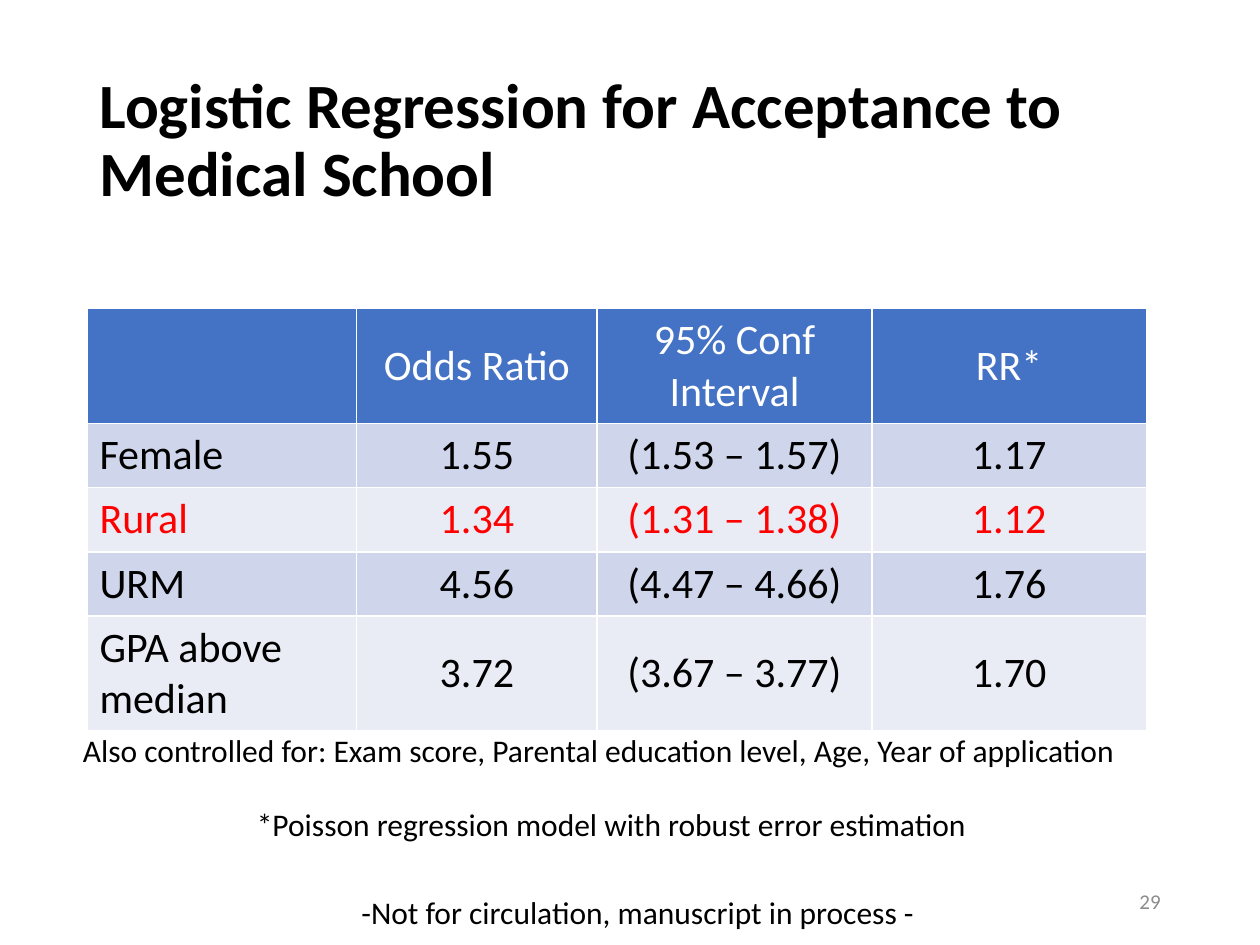
import pptx
import pptx.util
import pptx.dml.color
import pptx.enum.text
import pptx.oxml
import lxml.etree

Inches = pptx.util.Inches
Align = pptx.enum.text.PP_ALIGN
Anchor = pptx.enum.text.MSO_ANCHOR

COLORS = {
    "text": "000000",
    "highlight": "FF0000",
    "header": "4472C4",
    "white": "FFFFFF",
    "band_dark": "CFD5EA",
    "band_light": "E9EBF5",
    "page_number": "8C8C8C",
}


def rgb(name):
    return pptx.dml.color.RGBColor.from_string(COLORS[name])


def write_text(text_frame, text, size=18, color="text", bold=False,
               align=Align.LEFT, anchor=Anchor.TOP, wrap=True, line_spacing=None):
    text_frame.word_wrap = wrap
    text_frame.vertical_anchor = anchor
    paragraph = text_frame.paragraphs[0]
    paragraph.alignment = align
    paragraph.line_spacing = line_spacing
    run = paragraph.add_run()
    run.text = text
    run.font.name = "Calibri"
    run.font.size = pptx.util.Pt(size)
    run.font.bold = bold
    run.font.color.rgb = rgb(color)


presentation = pptx.Presentation()
presentation.slide_width = Inches(10)
presentation.slide_height = Inches(7.5)
slide = presentation.slides.add_slide(presentation.slide_layouts[6])

# Title
title = slide.shapes.add_textbox(Inches(0.69), Inches(0.4), Inches(8.62), Inches(1.45))
write_text(title.text_frame, "Logistic Regression for Acceptance to Medical School",
           size=36, bold=True, anchor=Anchor.MIDDLE, line_spacing=0.9)

# Regression table
rows = [
    ["", "Odds Ratio", "95% Conf Interval", "RR*"],
    ["Female", "1.55", "(1.53 – 1.57)", "1.17"],
    ["Rural", "1.34", "(1.31 – 1.38)", "1.12"],
    ["URM", "4.56", "(4.47 – 4.66)", "1.76"],
    ["GPA above median", "3.72", "(3.67 – 3.77)", "1.70"],
]
column_widths = [2.14, 1.91, 2.18, 2.18]
row_heights = [0.91, 0.51, 0.51, 0.51, 0.91]
table = slide.shapes.add_table(
    len(rows), len(column_widths), Inches(0.69), Inches(2.45),
    Inches(sum(column_widths)), Inches(sum(row_heights))).table
for column, width in zip(table.columns, column_widths):
    column.width = Inches(width)
for row, height in zip(table.rows, row_heights):
    row.height = Inches(height)

for row_index, values in enumerate(rows):
    if row_index == 0:
        fill, color = "header", "white"
    else:
        fill = "band_dark" if row_index % 2 else "band_light"
        color = "highlight" if values[0] == "Rural" else "text"
    for column_index, value in enumerate(values):
        cell = table.cell(row_index, column_index)
        is_label = column_index == 0
        if value:
            write_text(cell.text_frame, value, size=24, color=color,
                       align=Align.LEFT if is_label else Align.CENTER)
        cell.vertical_anchor = Anchor.TOP if is_label else Anchor.MIDDLE
        # White borders come before the fill in the cell properties
        properties = cell._tc.get_or_add_tcPr()
        for side in "LRTB":
            line = lxml.etree.SubElement(properties, pptx.oxml.ns.qn(f"a:ln{side}"),
                                         w=str(pptx.util.Pt(1)))
            solid = lxml.etree.SubElement(line, pptx.oxml.ns.qn("a:solidFill"))
            lxml.etree.SubElement(solid, pptx.oxml.ns.qn("a:srgbClr"), val=COLORS["white"])
        cell.fill.solid()
        cell.fill.fore_color.rgb = rgb(fill)

# Notes under the table
notes = [
    (0.56, 5.75, 8.66, "Also controlled for: Exam score, Parental education level, Age, Year of application"),
    (1.94, 6.34, 5.9, "*Poisson regression model with robust error estimation"),
    (2.77, 7.04, 4.7, "-Not for circulation, manuscript in process -"),
]
for left, top, width, text in notes:
    note = slide.shapes.add_textbox(Inches(left), Inches(top), Inches(width), Inches(0.4))
    write_text(note.text_frame, text, wrap=False)

# Page number
page_number = slide.shapes.add_textbox(Inches(7.06), Inches(6.95), Inches(2.25), Inches(0.4))
write_text(page_number.text_frame, "29", size=12, color="page_number",
           align=Align.RIGHT, anchor=Anchor.MIDDLE)

presentation.save("out.pptx")
